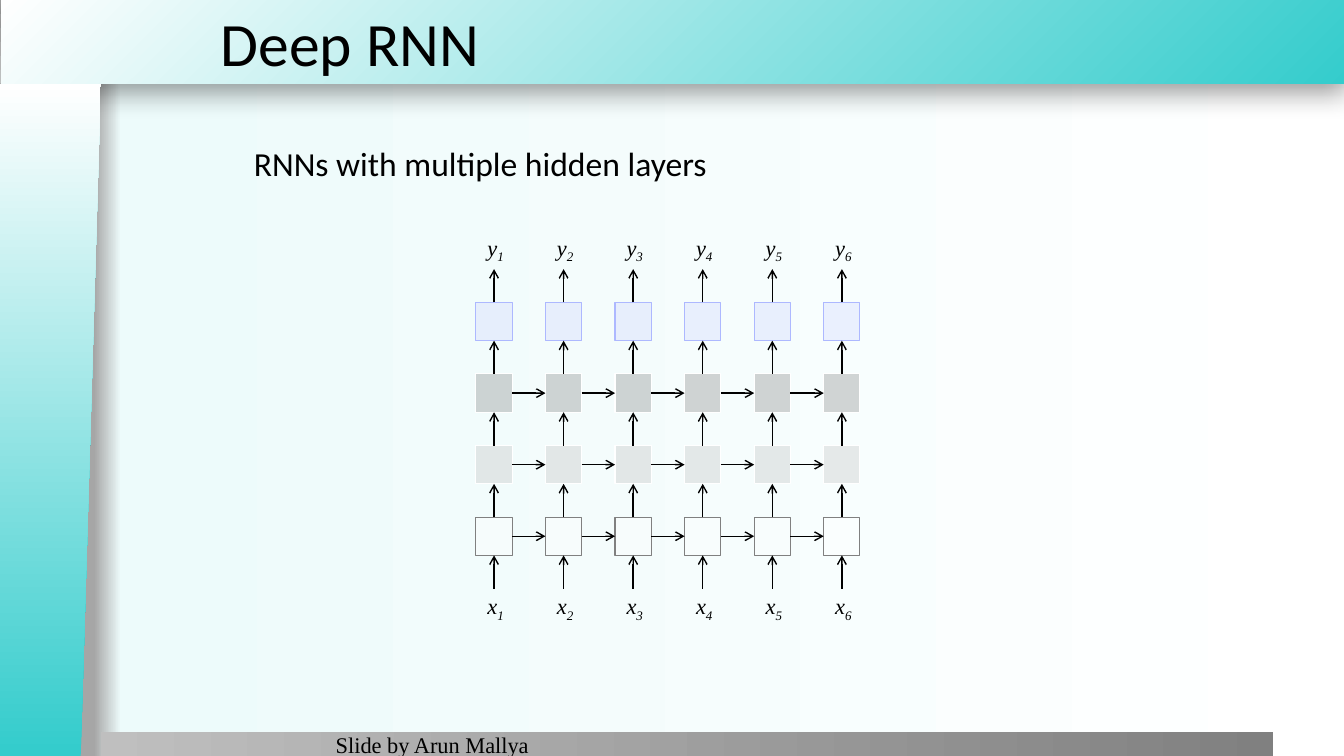
from dataclasses import dataclass

from lxml.etree import SubElement
from pptx import Presentation
from pptx.dml.color import RGBColor
from pptx.enum.shapes import MSO_CONNECTOR as Connector, MSO_SHAPE as Preset
from pptx.enum.text import MSO_ANCHOR as Anchor, PP_ALIGN as Align
from pptx.oxml.ns import qn
from pptx.util import Inches, Pt

BLACK = RGBColor(0x00, 0x00, 0x00)
WHITE = RGBColor(0xFF, 0xFF, 0xFF)
TEAL = RGBColor(0x34, 0xCC, 0xCC)
MIST = RGBColor(0xED, 0xFB, 0xFB)
EDGE_GRAY = RGBColor(0xA6, 0xA6, 0xA6)
LIGHT_GRAY = RGBColor(0xBF, 0xBF, 0xBF)
DARK_GRAY = RGBColor(0x80, 0x80, 0x80)
LAVENDER = RGBColor(0xCE, 0xD4, 0xFF)
PERIWINKLE = RGBColor(0xAD, 0xB8, 0xFF)

# Network grid, in inches
STEPS = 6
GRID_LEFT, GRID_TOP = 4.72, 3.0
COLUMN_PITCH, ROW_PITCH = 0.69, 0.71
CELL_WIDTH, CELL_HEIGHT = 0.36, 0.38
ARROW_LENGTH = 0.33
LABEL_WIDTH, LABEL_HEIGHT = 0.41, 0.4


@dataclass(frozen=True)
class Layer:
    fill: RGBColor
    line: RGBColor
    recurrent: bool = True


@dataclass(frozen=True)
class Panel:
    preset: Preset
    box: tuple
    stops: tuple
    rotation: int = 0
    flipped: bool = False
    radial: bool = False
    shadowed: bool = False


@dataclass(frozen=True)
class Caption:
    text: str
    box: tuple
    font: dict
    frame: dict


LAYERS = (
    Layer(LAVENDER, PERIWINKLE, recurrent=False),
    Layer(DARK_GRAY, WHITE),
    Layer(LIGHT_GRAY, WHITE),
    Layer(WHITE, DARK_GRAY),
)
PANELS = (
    Panel(Preset.RECTANGLE, (0.01, 0, 13.34, 0.83), ((0, TEAL), (100, WHITE)),
          radial=True, shadowed=True),
    Panel(Preset.FLOWCHART_MANUAL_INPUT, (-2.84, 3.67, 6.68, 1),
          ((1, TEAL), (100, WHITE)), rotation=270, flipped=True),
    Panel(Preset.RECTANGLE, (1, 7.26, 11.63, 0.25),
          ((0, LIGHT_GRAY), (100, DARK_GRAY))),
)
NO_MARGINS = dict.fromkeys(
    ("margin_left", "margin_top", "margin_right", "margin_bottom"), 0)
CAPTIONS = (
    Caption("Deep RNN", (2.09, 0, 11.25, 0.83),
            {"name": "Calibri", "size": Pt(44)},
            {"word_wrap": True, "vertical_anchor": Anchor.MIDDLE}),
    Caption("RNNs with multiple hidden layers", (2.42, 1.37, 9, 0.63),
            {"name": "Calibri", "size": Pt(24)}, {"word_wrap": True}),
    Caption("Slide by Arun Mallya", (3.33, 7.25, 2.75, 0.27),
            {"name": "Times New Roman", "size": Pt(16)},
            {"word_wrap": True, **NO_MARGINS}),
)
LABEL_FONT = {"name": "Times New Roman", "size": Pt(16), "italic": True}


def apply(target, values: dict) -> None:
    for name, value in values.items():
        setattr(target, name, value)


def add_gradient(owner, fill, stops: tuple, radial: bool = False) -> None:
    fill.gradient()
    gradient = next(owner.element.iter(qn("a:gradFill")))
    for child in list(gradient):
        gradient.remove(child)
    stop_list = SubElement(gradient, qn("a:gsLst"))
    for position, color in stops:
        stop = SubElement(stop_list, qn("a:gs"), pos=str(position * 1000))
        SubElement(stop, qn("a:srgbClr"), val=str(color))
    if radial:
        circle = SubElement(gradient, qn("a:path"))
        circle.set("path", "circle")
        SubElement(circle, qn("a:fillToRect"), l="100000", t="100000")
    else:
        SubElement(gradient, qn("a:lin"), ang="0", scaled="0")


def add_panel(slide, panel: Panel) -> None:
    shape = slide.shapes.add_shape(panel.preset, *map(Inches, panel.box))
    shape.shadow.inherit = False
    shape.rotation = panel.rotation
    shape.line.fill.background()
    add_gradient(shape, shape.fill, panel.stops, panel.radial)
    if panel.flipped:
        next(shape.element.iter(qn("a:xfrm"))).set("flipV", "1")
    if panel.shadowed:
        effects = next(shape.element.iter(qn("a:effectLst")))
        shadow = SubElement(effects, qn("a:outerShdw"), blurRad=str(Pt(20)),
                            dist=str(Pt(6)), dir="5400000", rotWithShape="0")
        color = SubElement(shadow, qn("a:srgbClr"), val=str(BLACK))
        SubElement(color, qn("a:alpha"), val="40000")


def add_run(paragraph, text: str, font: dict):
    run = paragraph.add_run()
    run.text = text
    apply(run.font, font)
    run.font.color.rgb = BLACK
    return run


def add_caption(slide, caption: Caption) -> None:
    shape = slide.shapes.add_textbox(*map(Inches, caption.box))
    apply(shape.text_frame, caption.frame)
    add_run(shape.text_frame.paragraphs[0], caption.text, caption.font)


def add_label(slide, letter: str, column: int, top: float) -> None:
    left = GRID_LEFT - 0.01 + column * COLUMN_PITCH
    shape = slide.shapes.add_textbox(
        *map(Inches, (left, top, LABEL_WIDTH, LABEL_HEIGHT)))
    shape.text_frame.word_wrap = False
    paragraph = shape.text_frame.paragraphs[0]
    paragraph.alignment = Align.CENTER
    add_run(paragraph, letter, LABEL_FONT)
    index = add_run(paragraph, str(column + 1), LABEL_FONT)
    index.font._element.set("baseline", "-25000")


def add_cell(slide, layer: Layer, column: int, row: int):
    left = GRID_LEFT + column * COLUMN_PITCH
    top = GRID_TOP + row * ROW_PITCH
    shape = slide.shapes.add_shape(
        Preset.RECTANGLE, *map(Inches, (left, top, CELL_WIDTH, CELL_HEIGHT)))
    shape.shadow.inherit = False
    shape.fill.solid()
    shape.fill.fore_color.rgb = layer.fill
    SubElement(next(shape.element.iter(qn("a:srgbClr"))), qn("a:alpha"), val="33000")
    shape.line.color.rgb = layer.line
    shape.line.width = Pt(0.75)
    return shape


def add_arrow(slide, start=None, end=None, start_side: int = 0, end_side: int = 2) -> None:
    """Join two cells, or run ARROW_LENGTH vertically from or to one cell."""
    cell = start or end
    x = cell.left + cell.width // 2
    tail_y = cell.top if start else cell.top + cell.height + Inches(ARROW_LENGTH)
    arrow = slide.shapes.add_connector(
        Connector.STRAIGHT, x, tail_y, x, tail_y - Inches(ARROW_LENGTH))
    if start:
        arrow.begin_connect(start, start_side)
    if end:
        arrow.end_connect(end, end_side)
    arrow.line.color.rgb = BLACK
    arrow.line.width = Pt(1)
    SubElement(next(arrow.element.iter(qn("a:ln"))), qn("a:tailEnd"), type="arrow")
    SubElement(arrow.element.spPr, qn("a:effectLst"))


def add_network(slide) -> None:
    cells = [[add_cell(slide, layer, column, row) for column in range(STEPS)]
             for row, layer in enumerate(LAYERS)]
    # Recurrent arrows along each hidden layer
    for layer, row in zip(LAYERS, cells):
        if layer.recurrent:
            for start, end in zip(row, row[1:]):
                add_arrow(slide, start, end, 3, 1)
    # Upward arrows, from inputs to outputs
    for column in zip(*cells):
        for start, end in zip((*column, None), (None, *column)):
            add_arrow(slide, start, end)
    # Output and input labels
    for column in range(STEPS):
        add_label(slide, "y", column, 2.27)
        add_label(slide, "x", column, 5.83)


def main() -> None:
    presentation = Presentation()
    apply(presentation, {"slide_width": Inches(13.33), "slide_height": Inches(7.5)})
    slide = presentation.slides.add_slide(presentation.slide_layouts[6])
    # Background and frame
    add_gradient(slide, slide.background.fill,
                 ((7, EDGE_GRAY), (9, MIST), (100, WHITE)))
    for panel in PANELS:
        add_panel(slide, panel)
    # Text and diagram
    for caption in CAPTIONS:
        add_caption(slide, caption)
    add_network(slide)
    presentation.save("out.pptx")


if __name__ == "__main__":
    main()
